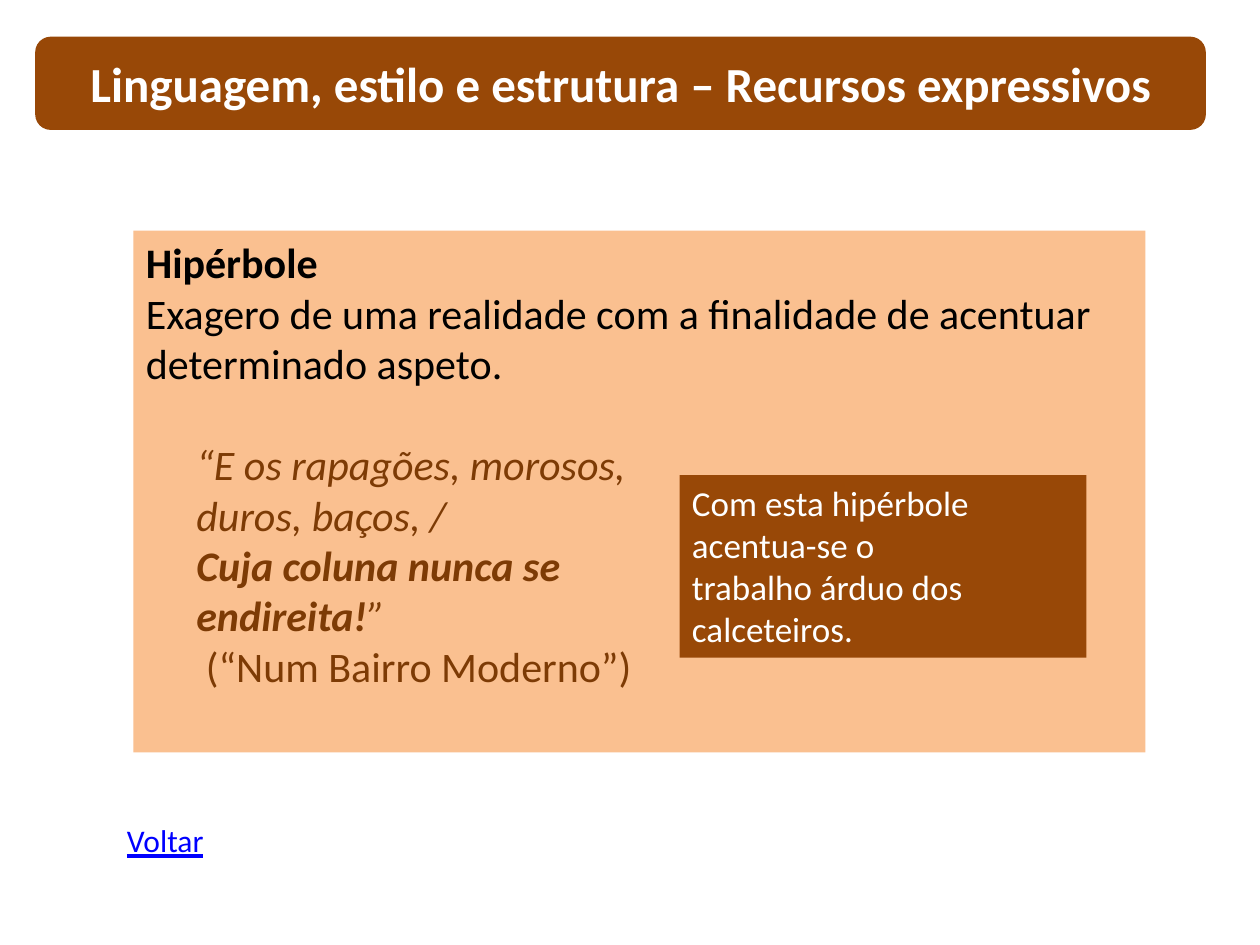
"""Build a slide that explains hyperbole with a quotation and a comment."""
from pptx import Presentation, util as u
from pptx.dml.color import RGBColor
from pptx.enum import shapes, text

BROWN, PEACH, WHITE, BLACK, QUOTE, BLUE = "984807", "FAC090", "FFFFFF", "000000", "7D3B05", "0000FF"
VERSE = {"color": QUOTE, "italic": True}
STRONG = VERSE | {"bold": True}
INDENT = u.Cm(1.02)
LINE_GAP = u.Pt(29)

BOXES = [
    {"at": (0.71, 0.74, 23.6, 1.88), "kind": "ROUNDED_RECTANGLE", "fill": BROWN,
     "size": 28, "anchor": "MIDDLE", "align": "CENTER",
     "paras": [[("Linguagem, estilo e estrutura – Recursos expressivos",
                 {"color": WHITE, "bold": True})]]},
    {"at": (2.69, 4.65, 20.4, 10.52), "kind": "RECTANGLE", "fill": PEACH, "size": 24,
     "paras": [
         [("Hipérbole", {"color": BLACK, "bold": True})],
         [("Exagero de uma realidade com a finalidade de acentuar determinado aspeto.",
           {"color": BLACK})],
         [("“E os rapagões, morosos,", VERSE)],
         [("duros, baços, /", VERSE)],
         [("Cuja coluna nunca se", STRONG)],
         [("endireita!", STRONG), ("”", VERSE)],
         [(" (“Num Bairro Moderno”)", {"color": QUOTE})]],
     "quote_from": 2},
    {"at": (13.7, 9.58, 8.2, 3.68), "kind": "RECTANGLE", "fill": BROWN, "size": 20,
     "paras": [[("Com esta hipérbole acentua-se o", {"color": WHITE})],
               [("trabalho árduo dos calceteiros.", {"color": WHITE})]]},
    {"at": (2.31, 16.43, 4.4, 1.02), "size": 18,
     "paras": [[("Voltar", {"color": BLUE, "underline": True})]]},
]


def color(value):
    return RGBColor.from_string(value)


def add_span(para, words, size, look):
    span = para.add_run()
    span.text = words
    values = {"name": "Calibri", "size": u.Pt(size), "bold": False} | look
    span.font.color.rgb = color(values.pop("color"))
    for name, value in values.items():
        setattr(span.font, name, value)


def add_box(page, item):
    place = [u.Cm(length) for length in item["at"]]
    if "fill" in item:
        box = page.shapes.add_shape(shapes.MSO_SHAPE[item["kind"]], *place)
        box.shadow.inherit = False
        box.fill.solid()
        box.fill.fore_color.rgb = color(item["fill"])
        box.line.fill.background()
    else:
        box = page.shapes.add_textbox(*place)
    frame = box.text_frame
    frame.word_wrap = True
    frame.vertical_anchor = text.MSO_ANCHOR[item.get("anchor", "TOP")]
    quote_from = item.get("quote_from", len(item["paras"]))
    for index, spans in enumerate(item["paras"]):
        para = frame.add_paragraph() if index else frame.paragraphs[0]
        para.alignment = text.PP_ALIGN[item.get("align", "LEFT")]
        if index == quote_from:
            para.space_before = LINE_GAP
        if index >= quote_from:
            para._p.get_or_add_pPr().set("marL", str(INDENT))
        for words, look in spans:
            add_span(para, words, item["size"], look)


def main():
    deck = Presentation()
    deck.slide_width, deck.slide_height = u.Cm(25.4), u.Cm(19.05)
    page = deck.slides.add_slide(deck.slide_layouts[6])
    for item in BOXES:
        add_box(page, item)
    deck.save("out.pptx")


if __name__ == "__main__":
    main()
